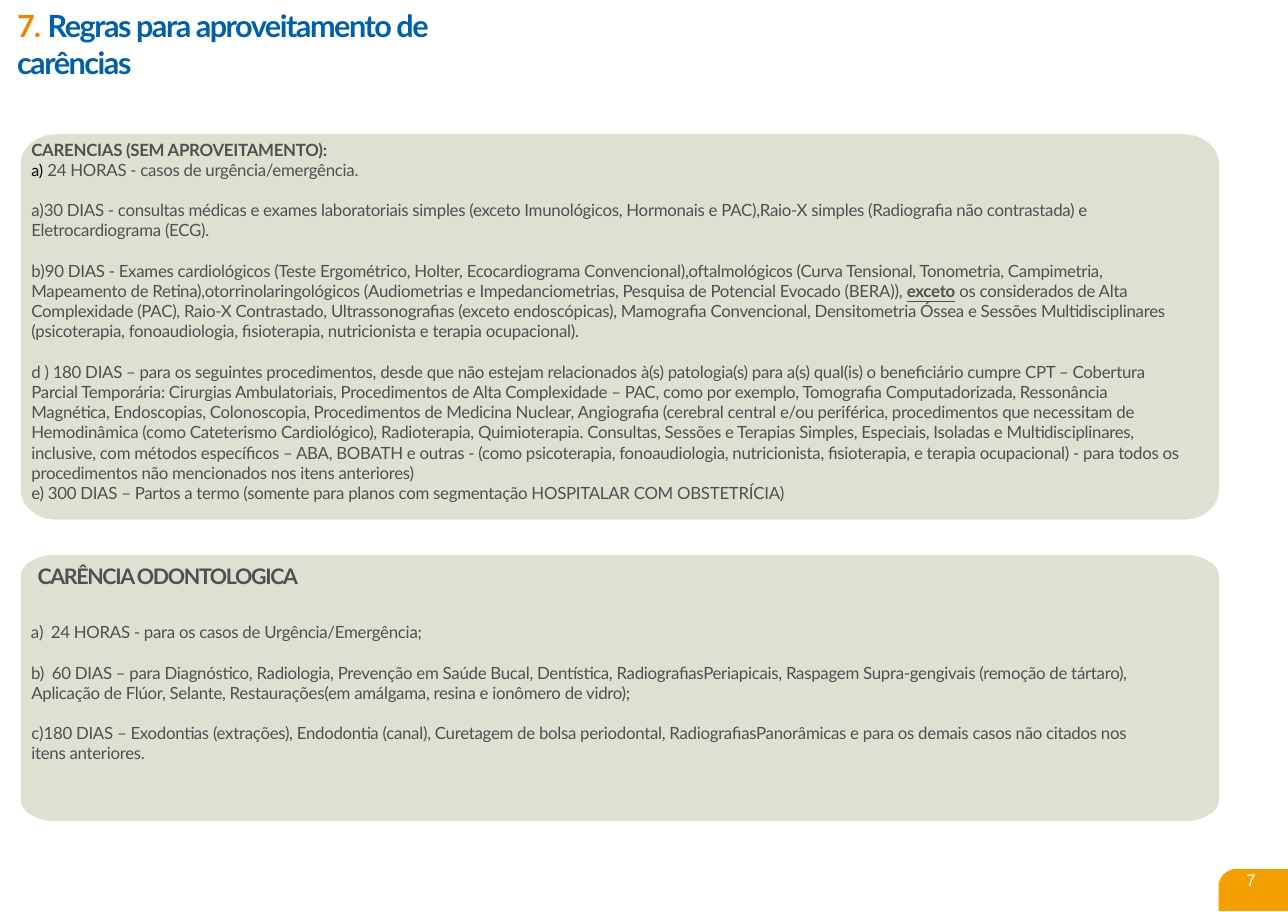
import math
from dataclasses import dataclass

import pptx
import pptx.dml.color
import pptx.enum.text
import pptx.oxml.ns
import pptx.util
from lxml import etree

Pt = pptx.util.Pt
RGBColor = pptx.dml.color.RGBColor

ORANGE = RGBColor(0xEB, 0x85, 0x00)
BLUE = RGBColor(0x00, 0x60, 0xAC)
GREY = RGBColor(0x50, 0x4F, 0x51)
BLACK = RGBColor(0x00, 0x00, 0x00)
WHITE = RGBColor(0xFF, 0xFF, 0xFF)
PANEL_FILL = RGBColor(0xDF, 0xE0, 0xD2)
TAB_FILL = RGBColor(0xF3, 0x9F, 0x00)

GAP = 13.2  # one blank line between rules
ARC_STEPS = 8


@dataclass
class Run:
    text: str
    size: float = 11
    color: RGBColor = GREY
    bold: bool = False
    underline: bool = False
    spacing: float = -0.2
    font: str = "Lato"


@dataclass
class Para:
    runs: list[Run]
    before: float = 0
    number: int = 0
    left: float = 0.9
    indent: float = 0


@dataclass
class Box:
    left: float
    top: float
    width: float
    height: float


@dataclass
class Panel:
    box: Box
    radius_x: float
    radius_y: float
    fill: RGBColor
    corners: tuple[int, ...] = (0, 1, 2, 3)  # clockwise from top left


@dataclass
class TextBlock:
    box: Box
    paras: list[Para]
    inset_top: float = 1


PANELS = [
    Panel(Box(796.3, 568, 45.4, 27.4), 12.2, 11.5, TAB_FILL, (0,)),
    Panel(Box(13.6, 87.8, 783, 252), 23, 19.4, PANEL_FILL),
    Panel(Box(13.6, 362.7, 783, 174.2), 23, 13.7, PANEL_FILL),
]

TITLE = TextBlock(Box(10.2, 3.7, 280, 50.4), [
    Para([Run("7. ", 20, ORANGE, True, spacing=-0.6),
          Run("Regras para aproveitamento de carências", 20, BLUE, True, spacing=-0.98)],
         before=1),
])

TEXT_BLOCKS = [
    TextBlock(Box(19.6, 90, 757, 242), [
        Para([Run("CARENCIAS (SEM APROVEITAMENTO):", bold=True)], before=1.1),
        Para([Run("a) ", 10.5, BLACK, spacing=0),
              Run("24 HORAS - casos de urgência/emergência.")]),
        Para([Run("30 DIAS - consultas médicas e exames laboratoriais simples (exceto Imunológicos, "
                  "Hormonais e PAC),Raio-X simples (Radiografia não contrastada) e "
                  "Eletrocardiograma (ECG).")], GAP, 1),
        Para([Run("90 DIAS - Exames cardiológicos (Teste Ergométrico, Holter, Ecocardiograma "
                  "Convencional),oftalmológicos (Curva Tensional, Tonometria, Campimetria, "
                  "Mapeamento de Retina),otorrinolaringológicos (Audiometrias e Impedanciometrias, "
                  "Pesquisa de Potencial Evocado (BERA)), "),
              Run("exceto", bold=True, underline=True),
              Run(" os considerados de Alta Complexidade (PAC), Raio-X Contrastado, "
                  "Ultrassonografias (exceto endoscópicas), Mamografia Convencional, Densitometria "
                  "Óssea e Sessões Multidisciplinares (psicoterapia, fonoaudiologia, fisioterapia, "
                  "nutricionista e terapia ocupacional).")], GAP, 2),
        Para([Run("d ) 180 DIAS – para os seguintes procedimentos, desde que não estejam relacionados "
                  "à(s) patologia(s) para a(s) qual(is) o beneficiário cumpre CPT – Cobertura Parcial "
                  "Temporária: Cirurgias Ambulatoriais, Procedimentos de Alta Complexidade – PAC, "
                  "como por exemplo, Tomografia Computadorizada, Ressonância Magnética, Endoscopias, "
                  "Colonoscopia, Procedimentos de Medicina Nuclear, Angiografia (cerebral central "
                  "e/ou periférica, procedimentos que necessitam de Hemodinâmica (como Cateterismo "
                  "Cardiológico), Radioterapia, Quimioterapia. "),
              Run("Consultas, Sessões e Terapias Simples, "
                  "Especiais, Isoladas e Multidisciplinares, inclusive, com métodos específicos – ABA, "
                  "BOBATH e outras - (como psicoterapia, fonoaudiologia, nutricionista, fisioterapia, "
                  "e terapia ocupacional) - para todos os procedimentos não mencionados nos itens "
                  "anteriores)")], GAP),
        Para([Run("e) 300 DIAS – Partos a termo (somente para planos com segmentação HOSPITALAR COM "
                  "OBSTETRÍCIA)")]),
    ]),
    TextBlock(Box(813.6, 568.8, 8, 14.4),
              [Para([Run("7", color=WHITE, spacing=0, font="Arial")])], inset_top=0),
    TextBlock(Box(19.6, 367.2, 731, 133.2), [
        Para([Run("CARÊNCIA ODONTOLOGICA", 14, bold=True, spacing=-0.9)], 1, left=5),
        Para([Run("24 HORAS - para os casos de Urgência/Emergência;")], 21.5, 1, 13.7, -13),
        Para([Run("60 DIAS – para Diagnóstico, Radiologia, Prevenção em Saúde Bucal, Dentística, "
                  "RadiografiasPeriapicais, Raspagem Supra-gengivais (remoção de tártaro),")],
             GAP, 2, 14.4, -13.7),
        Para([Run("Aplicação de Flúor, Selante, Restaurações(em amálgama, resina e ionômero "
                  "de vidro);")]),
        Para([Run("180 DIAS – Exodontias (extrações), Endodontia (canal), Curetagem de bolsa "
                  "periodontal, RadiografiasPanorâmicas e para os demais casos não citados nos "
                  "itens anteriores.")], GAP, 3),
    ]),
]


def draw_panel(s, panel: Panel) -> None:
    b = panel.box
    points = []
    for corner in range(4):
        x_dir = 1 if corner in (1, 2) else -1
        y_dir = 1 if corner in (2, 3) else -1
        x = b.left + (b.width if x_dir > 0 else 0)
        y = b.top + (b.height if y_dir > 0 else 0)
        if corner not in panel.corners:
            points.append((Pt(x), Pt(y)))
            continue
        for step in range(ARC_STEPS + 1):
            a = math.pi * (1 + corner / 2 + step / ARC_STEPS / 2)
            points.append((Pt(x + panel.radius_x * (math.cos(a) - x_dir)),
                           Pt(y + panel.radius_y * (math.sin(a) - y_dir))))
    builder = s.shapes.build_freeform(*points[0])
    builder.add_line_segments(points[1:], close=True)
    sp = builder.convert_to_shape()
    sp.shadow.inherit = False
    sp.fill.solid()
    sp.fill.fore_color.rgb = panel.fill
    sp.line.fill.background()


def format_para(p, para: Para) -> None:
    p.alignment = pptx.enum.text.PP_ALIGN.LEFT
    p.space_before = Pt(para.before)
    pPr = p._p.get_or_add_pPr()
    pPr.set("marL", str(Pt(para.left)))
    pPr.set("indent", str(Pt(para.indent)))
    if para.number:
        etree.SubElement(pPr, pptx.oxml.ns.qn("a:buAutoNum"),
                         type="alphaLcParenR", startAt=str(para.number))
    for run in para.runs:
        r = p.add_run()
        r.text = run.text
        r.font.name = run.font
        r.font.size = Pt(run.size)
        r.font.bold = run.bold
        r.font.underline = run.underline
        r.font.color.rgb = run.color
        r._r.get_or_add_rPr().set("spc", str(round(run.spacing * 100)))


def fill_text(sp, block: TextBlock) -> None:
    """Place a text shape and write its paragraphs."""
    b = block.box
    sp.left, sp.top, sp.width, sp.height = Pt(b.left), Pt(b.top), Pt(b.width), Pt(b.height)
    tf = sp.text_frame
    tf.word_wrap = True
    tf.auto_size = pptx.enum.text.MSO_AUTO_SIZE.NONE
    tf.vertical_anchor = pptx.enum.text.MSO_ANCHOR.TOP
    tf.margin_left = tf.margin_right = tf.margin_bottom = 0
    tf.margin_top = Pt(block.inset_top)
    for i, para in enumerate(block.paras):
        format_para(tf.add_paragraph() if i else tf.paragraphs[0], para)


def main() -> None:
    prs = pptx.Presentation()
    prs.slide_width, prs.slide_height = Pt(841.7), Pt(596.2)
    s = prs.slides.add_slide(prs.slide_layouts[5])
    fill_text(s.shapes.title, TITLE)
    for panel in PANELS:
        draw_panel(s, panel)
    for block in TEXT_BLOCKS:
        fill_text(s.shapes.add_textbox(0, 0, 0, 0), block)
    prs.save("out.pptx")


if __name__ == "__main__":
    main()
